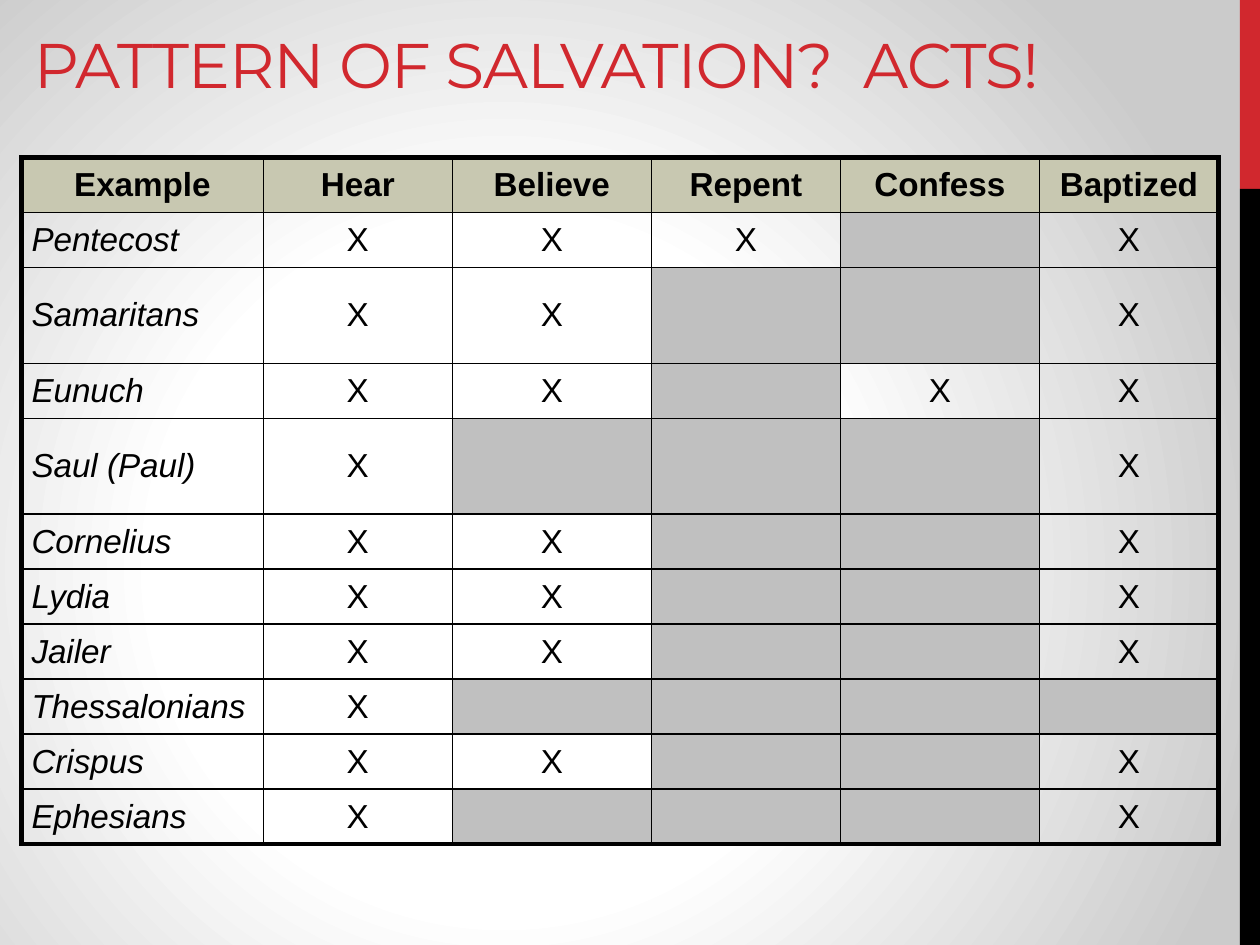
from dataclasses import dataclass

from pptx import Presentation
from pptx.dml.color import RGBColor
from pptx.enum.shapes import MSO_SHAPE
from pptx.enum.text import MSO_ANCHOR, PP_ALIGN
from pptx.oxml import parse_xml
from pptx.oxml.ns import nsdecls
from pptx.util import Inches, Pt

RECT = MSO_SHAPE.RECTANGLE
MIDDLE = MSO_ANCHOR.MIDDLE
LEFT, CENTER = PP_ALIGN.LEFT, PP_ALIGN.CENTER


@dataclass(frozen=True)
class Theme:
    red: str = "D1282E"
    black: str = "000000"
    white: str = "FFFFFF"
    edge: str = "CBCBCB"
    head: str = "C8C8B1"
    gray: str = "C0C0C0"
    title_font: str = "Montserrat"
    body_font: str = "Arial"
    title_size: int = 36
    body_size: int = 19
    thin: int = 1
    thick: int = 3


THEME = Theme()

HEADS = ["Example", "Hear", "Believe", "Repent", "Confess", "Baptized"]
WIDTHS = [1.92, 1.5, 1.58, 1.5, 1.58, 1.42]
# Each example with the steps its account names, by initial
CASES = [
    ("Pentecost", "HBRb"),
    ("Samaritans", "HBb"),
    ("Eunuch", "HBCb"),
    ("Saul (Paul)", "Hb"),
    ("Cornelius", "HBb"),
    ("Lydia", "HBb"),
    ("Jailer", "HBb"),
    ("Thessalonians", "H"),
    ("Crispus", "HBb"),
    ("Ephesians", "Hb"),
]
STEPS = "HBRCb"
TALL = {"Samaritans": 0.76, "Saul (Paul)": 0.76}


def rgb(code):
    return RGBColor.from_string(code)


def style(run, font, size, color, bold=False, italic=False):
    run.font.name = font
    run.font.size = Pt(size)
    run.font.color.rgb = rgb(color)
    run.font.bold = bold
    run.font.italic = italic


def add_back(slide):
    stops = [(0, THEME.white), (44, THEME.white), (100, THEME.edge)]
    marks = "".join(
        f'<a:gs pos="{pos * 1000}"><a:srgbClr val="{color}"/></a:gs>'
        for pos, color in stops
    )
    slide.element.cSld.insert(0, parse_xml(
        f'<p:bg {nsdecls("p", "a")}><p:bgPr><a:gradFill rotWithShape="1">'
        f'<a:gsLst>{marks}</a:gsLst><a:path path="circle">'
        '<a:fillToRect l="40000" t="60000" r="60000" b="40000"/></a:path>'
        '</a:gradFill><a:effectLst/></p:bgPr></p:bg>'
    ))


def add_band(slide, left, top, width, height):
    split = height / 5
    parts = [(top, split, THEME.red), (top + split, height - split, THEME.black)]
    for y, tall, color in parts:
        bar = slide.shapes.add_shape(
            RECT, Inches(left), Inches(y), Inches(width), Inches(tall))
        bar.shadow.inherit = False
        bar.fill.solid()
        bar.fill.fore_color.rgb = rgb(color)
        bar.line.fill.background()


def add_title(slide, left, top, width, height):
    box = slide.shapes.add_textbox(
        Inches(left), Inches(top), Inches(width), Inches(height))
    frame = box.text_frame
    frame.word_wrap = True
    frame.vertical_anchor = MIDDLE
    frame.text = "PATTERN OF SALVATION?  ACTS!"
    run = frame.paragraphs[0].runs[0]
    style(run, THEME.title_font, THEME.title_size, THEME.red)
    run.font._element.set("spc", "-60")


def set_edges(cell, heavy):
    props = cell._tc.get_or_add_tcPr()
    for spot, side in enumerate("LRTB"):
        width = Pt(THEME.thick if side in heavy else THEME.thin)
        props.insert(spot, parse_xml(
            f'<a:ln{side} {nsdecls("a")} w="{width}"><a:solidFill>'
            f'<a:srgbClr val="{THEME.black}"/></a:solidFill></a:ln{side}>'
        ))


def fill_cell(cell, text, color, align, bold, italic):
    cell.vertical_anchor = MIDDLE
    cell.margin_left = cell.margin_right = Inches(0.08)
    cell.margin_top = cell.margin_bottom = Inches(0.05)
    if color:
        cell.fill.solid()
        cell.fill.fore_color.rgb = rgb(color)
    else:
        cell.fill.background()
    if text:
        cell.text_frame.text = text
        para = cell.text_frame.paragraphs[0]
        para.alignment = align
        style(para.runs[0], THEME.body_font, THEME.body_size, THEME.black,
              bold, italic)


def add_grid(slide, left, top, width, height):
    rows = [HEADS] + [
        [name] + ["X" if step in found else "" for step in STEPS]
        for name, found in CASES
    ]
    last_row, last_col = len(rows) - 1, len(HEADS) - 1
    table = slide.shapes.add_table(
        len(rows), len(HEADS), Inches(left), Inches(top),
        Inches(width), Inches(height)).table
    table.first_row = table.horz_banding = False
    for col, wide in zip(table.columns, WIDTHS):
        col.width = Inches(wide)
    # Rows without a set height share what is left
    short = (height - sum(TALL.values())) / (len(rows) - len(TALL))
    for r, row in enumerate(rows):
        table.rows[r].height = Inches(TALL.get(row[0], short))
        for c, text in enumerate(row):
            cell = table.cell(r, c)
            head = r == 0
            name = c == 0 and not head
            color = THEME.head if head else None if text else THEME.gray
            fill_cell(cell, text, color, LEFT if name else CENTER, head, name)
            outer = {"L": c == 0, "R": c == last_col,
                     "T": head, "B": r == last_row}
            set_edges(cell, [side for side in outer if outer[side]])


def main():
    deck = Presentation()
    deck.slide_width, deck.slide_height = Inches(10), Inches(7.5)
    slide = deck.slides.add_slide(deck.slide_layouts[6])
    add_back(slide)
    add_band(slide, 9.84, 0, 0.16, 7.5)
    add_title(slide, 0.17, 0.17, 9.5, 0.67)
    add_grid(slide, 0.17, 1.25, 9.5, 5.45)
    deck.save("out.pptx")


if __name__ == "__main__":
    main()
